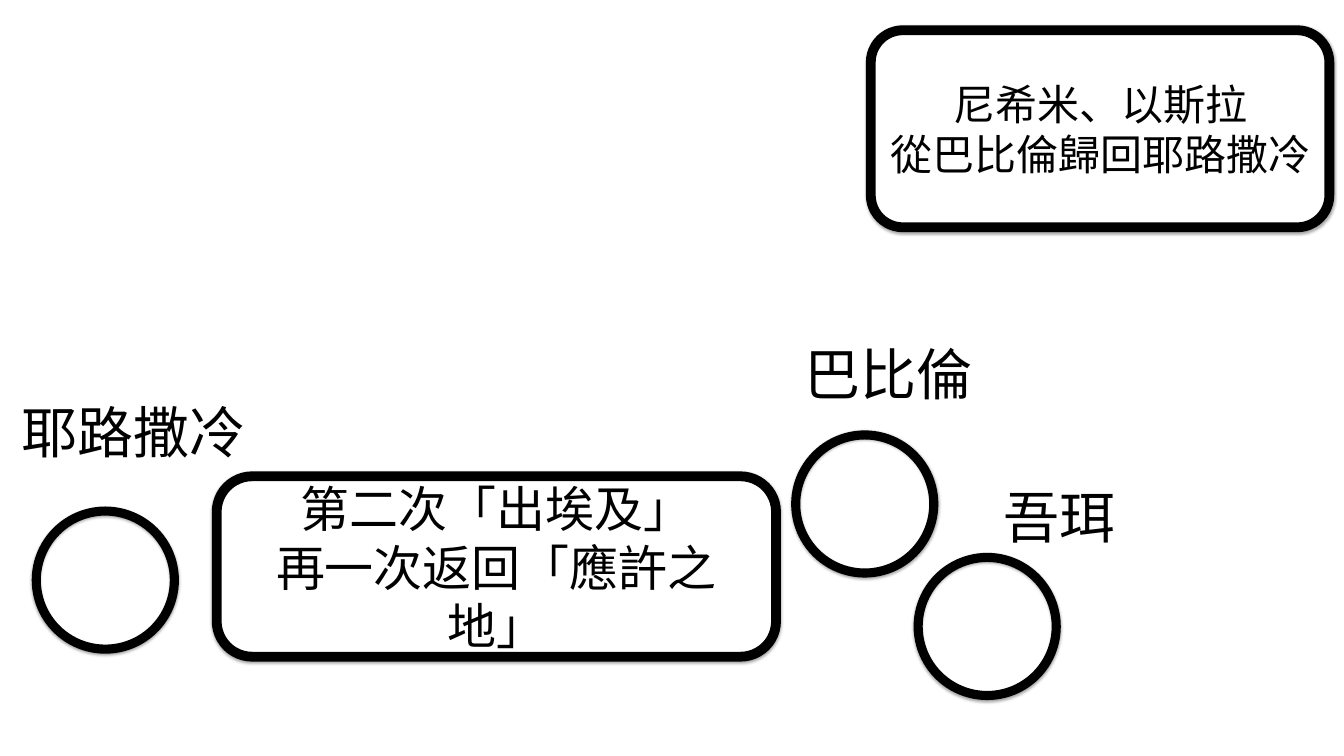
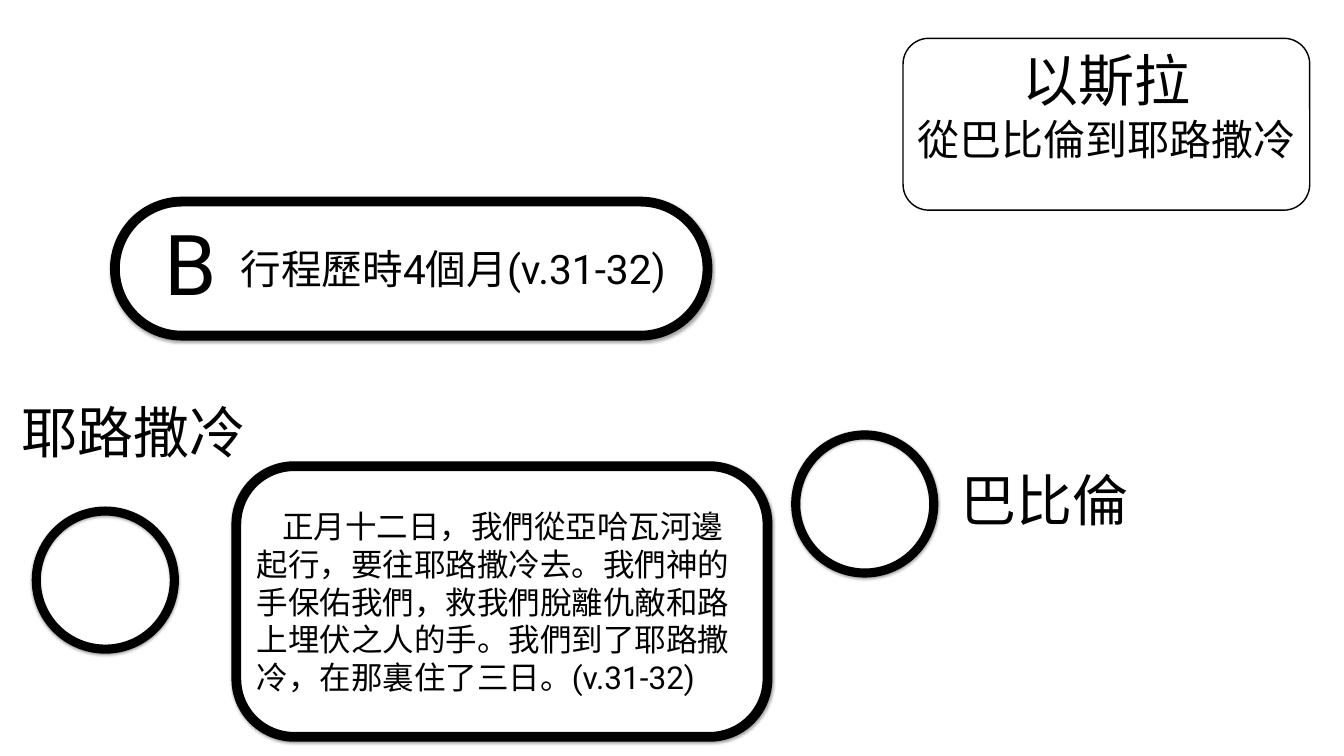
from dataclasses import dataclass

from lxml import etree
from pptx import Presentation
from pptx.dml.color import RGBColor
from pptx.enum.shapes import MSO_SHAPE
from pptx.enum.text import MSO_ANCHOR, MSO_AUTO_SIZE, PP_ALIGN
from pptx.oxml.ns import qn
from pptx.util import Inches, Pt

OVAL, ROUND = MSO_SHAPE.OVAL, MSO_SHAPE.ROUNDED_RECTANGLE
TOP, MIDDLE = MSO_ANCHOR.TOP, MSO_ANCHOR.MIDDLE
LEFT, CENTER, RIGHT = PP_ALIGN.LEFT, PP_ALIGN.CENTER, PP_ALIGN.RIGHT
FIXED, GROW = MSO_AUTO_SIZE.NONE, MSO_AUTO_SIZE.SHAPE_TO_FIT_TEXT
TITLE_ONLY = 5


@dataclass(frozen=True)
class Theme:
    font: str = "Roboto"
    ink: RGBColor = RGBColor(0, 0, 0)
    paper: RGBColor = RGBColor(255, 255, 255)
    letter: int = 120
    place: int = 80
    event: int = 70
    head: int = 60
    trip: int = 58
    verse: int = 45
    ring: int = 13
    thick: int = 14
    thin: int = 2
    inset: float = 0.07


THEME = Theme()

# Places that both slides share: left and top of each ring
RING = 2.74
SALEM_RING = (0.72, 10.14)
BABEL_RING = (15.79, 8.63)
UR_RING = (18.22, 11.06)


def area(box):
    return [Inches(v) for v in box]


def write(shape, lines, align=CENTER, anchor=MIDDLE, wrap=True, size=FIXED):
    """Fill a shape with lines, each a pair of text and type size."""
    frame = shape.text_frame
    frame.word_wrap, frame.auto_size = wrap, size
    frame.vertical_anchor = anchor
    frame.margin_left = frame.margin_right = Inches(THEME.inset)
    frame.margin_top = frame.margin_bottom = Inches(THEME.inset)
    for i, (text, points) in enumerate(lines):
        para = frame.add_paragraph() if i else frame.paragraphs[0]
        para.alignment = align
        run = para.add_run()
        run.text = text
        font = run.font
        font.name, font.size = THEME.font, Pt(points)
        font.color.rgb = THEME.ink
        east = etree.SubElement(run._r.get_or_add_rPr(), qn("a:ea"))
        east.set("typeface", THEME.font)
    return frame


def shade(shape):
    """Add the soft shadow below a shape."""
    effects = shape._element.spPr.find(qn("a:effectLst"))
    outer = etree.SubElement(
        effects, qn("a:outerShdw"), blurRad=str(Pt(4)), dist=str(Pt(2)),
        dir="5400000", rotWithShape="0")
    color = etree.SubElement(outer, qn("a:srgbClr"), val=str(THEME.ink))
    etree.SubElement(color, qn("a:alpha"), val="35000")


def outline(slide, kind, box, width, shadow=True):
    shape = slide.shapes.add_shape(kind, *area(box))
    shape.shadow.inherit = False
    shape.line.color.rgb = THEME.ink
    shape.line.width = Pt(width)
    if shadow:
        shade(shape)
    return shape


def ring(slide, spot):
    outline(slide, OVAL, (*spot, RING, RING), THEME.ring).fill.background()


def panel(slide, box, curve, width=THEME.thick, shadow=True):
    shape = outline(slide, ROUND, box, width, shadow)
    shape.adjustments[0] = curve
    shape.fill.solid()
    shape.fill.fore_color.rgb = THEME.paper
    return shape


def label(slide, box, text, points=THEME.place, align=LEFT, anchor=TOP):
    shape = slide.shapes.add_textbox(*area(box))
    write(shape, [(text, points)], align, anchor, False, GROW)


def title(slide, box, lines, anchor=MIDDLE):
    """Move the title over the panel that frames it."""
    shape = slide.shapes.title
    shape.left, shape.top, shape.width, shape.height = area(box)
    write(shape, lines, anchor=anchor, wrap=False)
    tree = shape._element.getparent()
    tree.append(shape._element)


def start(deck):
    """Add a slide with the two cities common to both maps."""
    slide = deck.slides.add_slide(deck.slide_layouts[TITLE_ONLY])
    ring(slide, BABEL_RING)
    ring(slide, SALEM_RING)
    label(slide, (0.35, 7.81, 4.62, 1.48), "耶路撒冷")
    return slide


def exodus(deck):
    slide = start(deck)
    label(slide, (15.89, 6.66, 3.5, 1.48), "巴比倫")
    ring(slide, UR_RING)
    label(slide, (19.84, 9.5, 2.38, 1.48), "吾珥")

    # Event between the cities
    event = panel(slide, (4.3, 9.45, 11.1, 3.58), 0.197)
    write(event, [("第二次「出埃及」", THEME.event),
                  ("再一次返回「應許之地」", THEME.event)])

    # Corner title
    corner = (17.28, 0.6, 9.1, 3.91)
    panel(slide, corner, 0.163)
    title(slide, corner, [("尼希米、以斯拉", THEME.head),
                          ("從巴比倫歸回耶路撒冷", THEME.head)])


def journey(deck):
    slide = start(deck)
    label(slide, (19, 9.16, 3.5, 1.48), "巴比倫")

    # Corner title
    panel(slide, (17.92, 0.76, 8.07, 3.41), 0.15, THEME.thin, False)
    title(slide, (18.11, 0.84, 7.71, 2.49),
          [("以斯拉", THEME.place), ("從巴比倫到耶路撒冷", THEME.head)], TOP)

    # Verse between the cities
    verse = panel(slide, (4.69, 9.25, 10.54, 5.37), 0.214)
    frame = write(verse, [(
        "正月十二日，我們從亞哈瓦河邊起行，要往耶路撒冷去。"
        "我們神的手保佑我們，救我們脫離仇敵和路上埋伏之人的手。"
        "我們到了耶路撒冷，在那裏住了三日。(v.31-32)", THEME.verse)], LEFT)
    props = frame.paragraphs[0]._p.get_or_add_pPr()
    props.set("indent", str(Inches(0.5)))

    # Length of the trip, with its letter
    trip = panel(slide, (2.28, 4, 11.76, 2.66), 0.5)
    frame = write(trip, [("行程歷時4個月(v.31-32)", THEME.trip)], RIGHT)
    frame.margin_right = Inches(0.44)
    label(slide, (3.17, 4.14, 1.21, 2.13), "B", THEME.letter, CENTER, MIDDLE)


def main():
    deck = Presentation()
    deck.slide_width, deck.slide_height = Inches(26.67), Inches(15)
    exodus(deck)
    journey(deck)
    deck.save("out.pptx")


if __name__ == "__main__":
    main()
